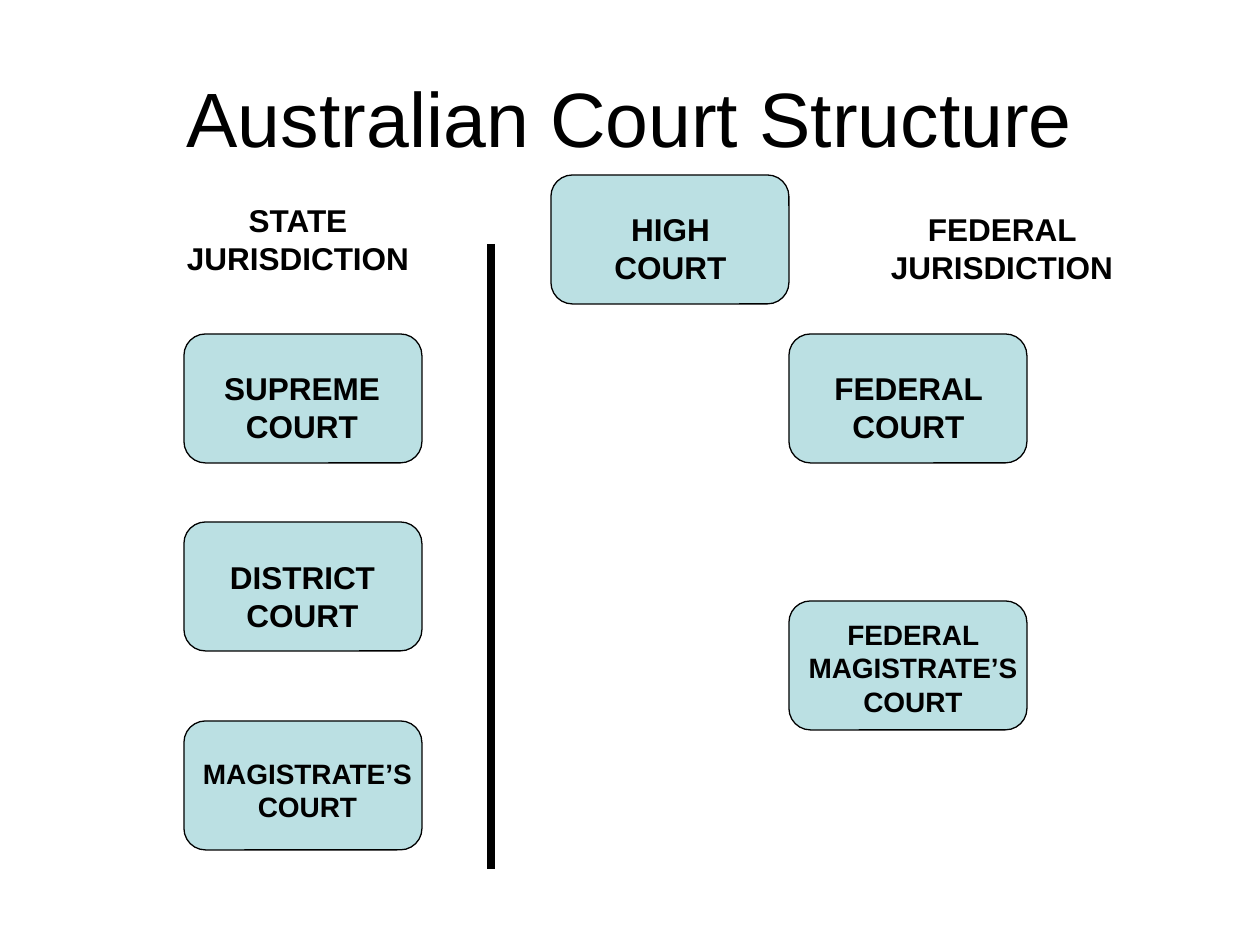
"""Build the Australian court structure slide."""
from dataclasses import dataclass

from lxml.etree import SubElement
from pptx import Presentation
from pptx.dml.color import RGBColor
from pptx.enum.shapes import MSO_CONNECTOR, MSO_SHAPE as Preset
from pptx.enum.text import MSO_ANCHOR as Anchor, MSO_AUTO_SIZE as AutoSize, PP_ALIGN as Align
from pptx.oxml.ns import qn
from pptx.slide import Slide
from pptx.text.text import TextFrame
from pptx.util import Emu, Pt

PX_PER_INCH = 126
COURT_WIDTH, COURT_HEIGHT = 238, 129
STATE_X, HIGH_X, FEDERAL_X = 184, 551, 789


@dataclass(frozen=True)
class Theme:
    font: str = "Arial"
    ink: RGBColor = RGBColor(0x00, 0x00, 0x00)
    court_fill: RGBColor = RGBColor(0xBB, 0xE0, 0xE3)
    title_size: int = 44
    label_size: int = 18
    small_size: int = 16
    outline: float = 0.75
    divider: float = 4.5


THEME = Theme()


@dataclass(frozen=True)
class Label:
    text: str
    x: int
    y: int
    width: int
    height: int = 88
    size: int = THEME.label_size


@dataclass(frozen=True)
class Court:
    x: int
    y: int
    label: Label


COURTS = (
    Court(HIGH_X, 175, Label("HIGH COURT", 581, 204, 179)),
    Court(STATE_X, 334, Label("SUPREME COURT", 203, 363, 198)),
    Court(FEDERAL_X, 334, Label("FEDERAL COURT", 819, 363, 179)),
    Court(STATE_X, 522, Label("DISTRICT COURT", 213, 552, 179)),
    Court(STATE_X, 721, Label("MAGISTRATE’S COURT", 174, 750, 267, 81, THEME.small_size)),
    Court(FEDERAL_X, 601,
          Label("FEDERAL MAGISTRATE’S COURT", 789, 611, 248, 113, THEME.small_size)),
)
JURISDICTIONS = (
    Label("STATE JURISDICTION", 174, 195, 248),
    Label("FEDERAL JURISDICTION", 878, 204, 248),
)


def px(length: int) -> Emu:
    return Emu(round(length * 914400 / PX_PER_INCH))


def write(frame: TextFrame, text: str, *, size: int, bold: bool = False,
          anchor: Anchor = Anchor.TOP, fit: AutoSize = AutoSize.NONE) -> None:
    frame.word_wrap = True
    frame.auto_size = fit
    frame.vertical_anchor = anchor
    frame.text = text
    paragraph = frame.paragraphs[0]
    paragraph.alignment = Align.CENTER
    font = paragraph.runs[0].font
    font.name, font.size, font.bold = THEME.font, Pt(size), bold
    font.color.rgb = THEME.ink


def draw_title(slide: Slide, text: str) -> None:
    title = slide.shapes.title
    title.left, title.top, title.width, title.height = px(63), px(38), px(1134), px(158)
    write(title.text_frame, text, size=THEME.title_size, anchor=Anchor.MIDDLE)


def draw_label(slide: Slide, label: Label) -> None:
    box = slide.shapes.add_textbox(px(label.x), px(label.y), px(label.width), px(label.height))
    write(box.text_frame, label.text, size=label.size, bold=True,
          fit=AutoSize.SHAPE_TO_FIT_TEXT)


def draw_court(slide: Slide, court: Court) -> None:
    panel = slide.shapes.add_shape(Preset.FLOWCHART_ALTERNATE_PROCESS, px(court.x), px(court.y),
                                   px(COURT_WIDTH), px(COURT_HEIGHT))
    panel.shadow.inherit = False
    panel.fill.solid()
    panel.fill.fore_color.rgb = THEME.court_fill
    panel.line.color.rgb = THEME.ink
    panel.line.width = Pt(THEME.outline)
    draw_label(slide, court.label)


def draw_divider(slide: Slide, x: int, top: int, bottom: int) -> None:
    divider = slide.shapes.add_connector(MSO_CONNECTOR.STRAIGHT, px(x), px(top), px(x), px(bottom))
    divider.line.color.rgb = THEME.ink
    divider.line.width = Pt(THEME.divider)
    SubElement(divider._element.spPr, qn("a:effectLst"))


def main() -> None:
    deck = Presentation()
    deck.slide_width, deck.slide_height = px(1260), px(945)
    slide = deck.slides.add_slide(deck.slide_layouts.get_by_name("Title Only"))
    draw_title(slide, "Australian Court Structure")
    for court in COURTS:
        draw_court(slide, court)
    draw_divider(slide, 491, 244, 869)
    for jurisdiction in JURISDICTIONS:
        draw_label(slide, jurisdiction)
    deck.save("out.pptx")


if __name__ == "__main__":
    main()
